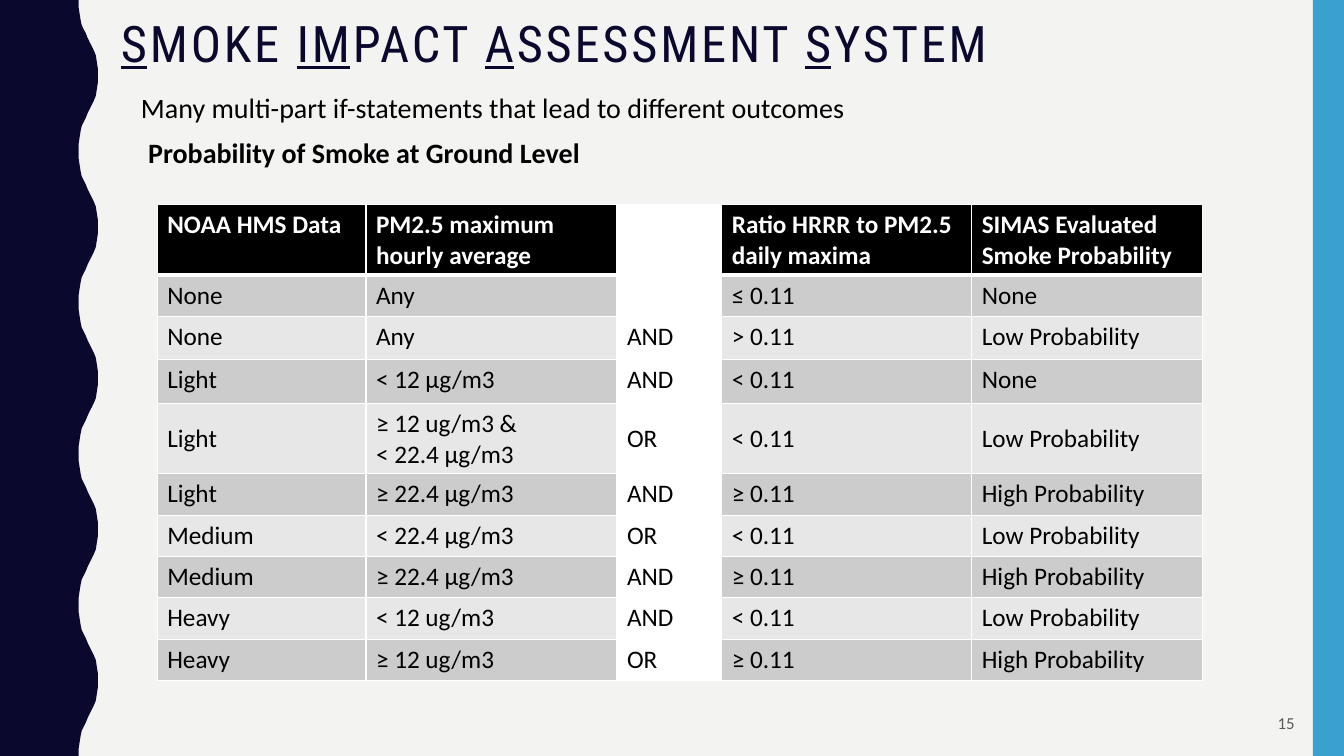
from dataclasses import dataclass

from lxml import etree
from pptx import Presentation
from pptx.dml.color import RGBColor
from pptx.enum.shapes import MSO_SHAPE
from pptx.enum.text import MSO_ANCHOR, MSO_AUTO_SIZE, PP_ALIGN
from pptx.oxml.ns import qn
from pptx.util import Inches, Pt

RECT = MSO_SHAPE.RECTANGLE
TOP, MIDDLE = MSO_ANCHOR.TOP, MSO_ANCHOR.MIDDLE
LEFT, RIGHT = PP_ALIGN.LEFT, PP_ALIGN.RIGHT
FIXED = MSO_AUTO_SIZE.NONE

# The slide is a grid of 100 columns by 100 rows
WIDTH, HEIGHT = Inches(13.33), Inches(7.5)
NAVY, BLUE, PAPER = "0B082E", "3AA0CE", "F3F3F2"
BLACK, WHITE, GREY = "000000", "FFFFFF", "595959"
DARK, LIGHT = "CCCCCC", "E7E7E7"
BODY, HEAD = "Calibri", "Roboto Condensed"


@dataclass
class Box:
    left: float
    top: float
    width: float
    height: float

    def place(self) -> tuple:
        return (cols(self.left), rows(self.top),
                cols(self.width), rows(self.height))


@dataclass
class Style:
    size: float
    color: str = BLACK
    font: str = BODY
    bold: bool = False


@dataclass
class Label:
    text: str
    box: Box
    style: Style
    align: PP_ALIGN = LEFT
    anchor: MSO_ANCHOR = TOP


def cols(count: float) -> int:
    return round(WIDTH * count / 100)


def rows(count: float) -> int:
    return round(HEIGHT * count / 100)


def paint(fill, color: str) -> None:
    fill.solid()
    fill.fore_color.rgb = RGBColor.from_string(color)


def add_run(para, text: str, style: Style):
    run = para.add_run()
    run.text = text
    font = run.font
    font.name, font.size, font.bold = style.font, Pt(style.size), style.bold
    font.color.rgb = RGBColor.from_string(style.color)
    return run


def finish(shape, color: str) -> None:
    paint(shape.fill, color)
    shape.line.fill.background()
    shape.shadow.inherit = False


# Half a wave as column and row, from trough to crest
CURVE = [(5.85, 0), (5.85, 0.93), (5.93, 1.87), (6, 2.67), (6.08, 3.33),
         (6.23, 3.87), (6.38, 4.4), (6.53, 5.07), (6.68, 5.6), (6.83, 6.13),
         (6.98, 6.67), (7.13, 7.33), (7.2, 8.13), (7.28, 9.07), (7.28, 10)]
PERIOD, WAVES = 20, 5


def add_wave(slide) -> None:
    cycle = CURVE + [(x, PERIOD - y) for x, y in CURVE[-2::-1]]
    edge = [(cols(x), rows(y + PERIOD * turn))
            for turn in range(WAVES) for x, y in cycle]
    form = slide.shapes.build_freeform(0, 0)
    form.add_line_segments(edge + [(0, HEIGHT)], close=True)
    finish(form.convert_to_shape(), NAVY)


# Title pieces, each with its underline
TITLE = [("S", True), ("MOKE ", False), ("IM", True), ("PACT ", False),
         ("A", True), ("SSESSMENT ", False), ("S", True), ("YSTEM", False)]


def set_title(title) -> None:
    box = Box(8.25, 1.87, 90.62, 10.27)
    title.left, title.top, title.width, title.height = box.place()
    frame = title.text_frame
    frame.auto_size, frame.vertical_anchor = FIXED, TOP
    para = frame.paragraphs[0]
    para.alignment, para.line_spacing = LEFT, 0.9
    for text, under in TITLE:
        run = add_run(para, text, Style(36, NAVY, HEAD))
        run.font.underline = under
        run._r.get_or_add_rPr().set("spc", "200")


LABELS = [
    Label("15", Box(90.02, 93.07, 7.05, 5.07), Style(12, GREY), RIGHT, MIDDLE),
    Label("Probability of Smoke at Ground Level",
          Box(10.28, 17.33, 48.76, 5.87), Style(20, bold=True)),
    Label("Many multi-part if-statements that lead to different outcomes",
          Box(9.75, 11.33, 87.7, 5.87), Style(20)),
]


def add_label(slide, label: Label) -> None:
    frame = slide.shapes.add_textbox(*label.box.place()).text_frame
    frame.word_wrap, frame.vertical_anchor = True, label.anchor
    para = frame.paragraphs[0]
    para.alignment = label.align
    add_run(para, label.text, label.style)


# Table: a new line in a cell starts a new paragraph
WIDTHS = [15.53, 18.68, 7.8, 18.6, 17.18]
HEIGHTS = [9.2, 5.47, 5.73, 5.73, 9.2] + [5.47] * 5
JOIN = 2
DATA = [
    ("NOAA HMS Data", "PM2.5 maximum hourly average", "",
     "Ratio HRRR to PM2.5 daily maxima", "SIMAS Evaluated Smoke Probability"),
    ("None", "Any", "", "≤ 0.11", "None"),
    ("None", "Any", "AND", "> 0.11", "Low Probability"),
    ("Light", "< 12 µg/m3", "AND", "< 0.11", "None"),
    ("Light", "≥ 12 ug/m3 &\n< 22.4 µg/m3", "OR", "< 0.11",
     "Low Probability"),
    ("Light", "≥ 22.4 µg/m3", "AND", "≥ 0.11", "High Probability"),
    ("Medium", "< 22.4 µg/m3", "OR", "< 0.11", "Low Probability"),
    ("Medium", "≥ 22.4 µg/m3", "AND", "≥ 0.11", "High Probability"),
    ("Heavy", "< 12 ug/m3", "AND", "< 0.11", "Low Probability"),
    ("Heavy", "≥ 12 ug/m3", "OR", "≥ 0.11", "High Probability"),
]


def add_edges(cell, row: int) -> None:
    thick = {"T": 3 if row == 1 else 1, "B": 3 if row == 0 else 1}
    props = cell._tc.get_or_add_tcPr()
    for spot, side in enumerate("LRTB"):
        line = etree.Element(qn(f"a:ln{side}"), w=str(Pt(thick.get(side, 1))))
        fill = etree.SubElement(line, qn("a:solidFill"))
        etree.SubElement(fill, qn("a:srgbClr"), val=WHITE)
        props.insert(spot, line)


def fill_cell(cell, text: str, row: int, col: int) -> None:
    band = BLACK if row == 0 else DARK if row % 2 else LIGHT
    paint(cell.fill, WHITE if col == JOIN else band)
    add_edges(cell, row)
    style = Style(18, BLACK if row else WHITE, bold=row == 0)
    frame = cell.text_frame
    for count, part in enumerate(text.split("\n") if text else []):
        para = frame.add_paragraph() if count else frame.paragraphs[0]
        add_run(para, part, style)


def add_grid(slide) -> None:
    box = Box(11.7, 27.07, sum(WIDTHS), sum(HEIGHTS))
    table = slide.shapes.add_table(len(DATA), len(WIDTHS), *box.place()).table
    table.horz_banding = False
    for col, width in enumerate(WIDTHS):
        table.columns[col].width = cols(width)
    for row, texts in enumerate(DATA):
        table.rows[row].height = rows(HEIGHTS[row])
        tall = any("\n" in text for text in texts)
        for col, text in enumerate(texts):
            cell = table.cell(row, col)
            cell.vertical_anchor = MIDDLE if tall else TOP
            fill_cell(cell, text, row, col)


def main() -> None:
    deck = Presentation()
    deck.slide_width, deck.slide_height = WIDTH, HEIGHT
    slide = deck.slides.add_slide(deck.slide_layouts[5])
    # Backdrop
    paint(slide.background.fill, PAPER)
    add_wave(slide)
    bar = Box(97.68, 0, 2.32, 100)
    finish(slide.shapes.add_shape(RECT, *bar.place()), BLUE)
    # Content
    set_title(slide.shapes.title)
    for label in LABELS:
        add_label(slide, label)
    add_grid(slide)
    deck.save("out.pptx")


if __name__ == "__main__":
    main()
